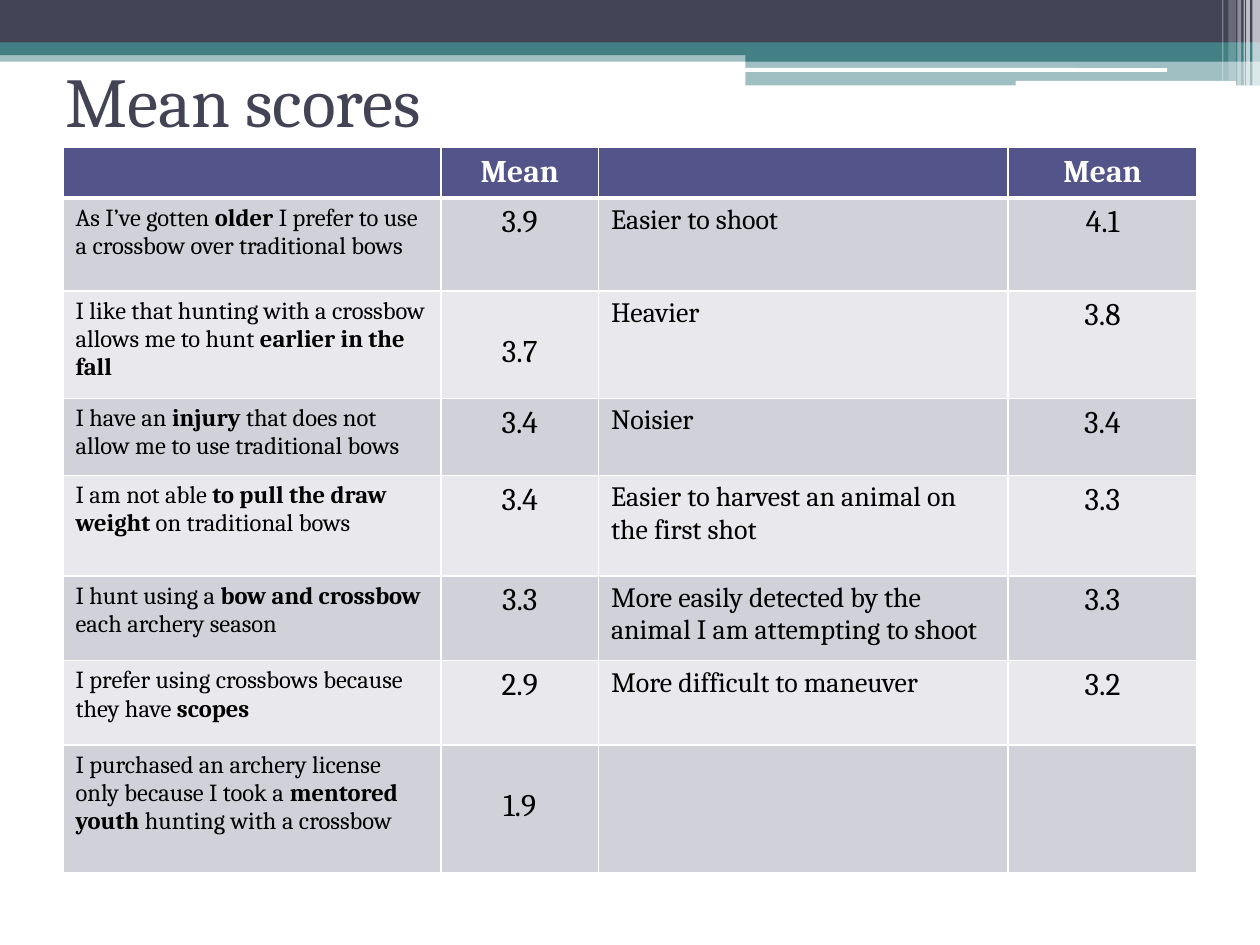
import lxml.etree
import pptx
import pptx.dml.color
import pptx.enum.shapes
import pptx.enum.text
import pptx.oxml.ns
import pptx.util

Pt = pptx.util.Pt
RGB = pptx.dml.color.RGBColor.from_string
qn = pptx.oxml.ns.qn
SHAPES = pptx.enum.shapes.MSO_SHAPE
ALIGN = pptx.enum.text.PP_ALIGN

COLORS = {
    "slate": "424456", "teal": "438086", "white": "FFFFFF", "black": "000000",
    "header": "53548A", "band_dark": "D1D1DA", "band_light": "E9E9ED",
}
FONT = "Cambria"

deck = pptx.Presentation()
deck.slide_width, deck.slide_height = Pt(720), Pt(540)
page = deck.slides.add_slide(deck.slide_layouts[6])

# Banner: left, top, width, height, colour, opacity in percent
bars = [
    (0, 28.8, 720, 6.48, "teal", 50),
    (0, 0, 720, 24.48, "slate", 100),
    (0, 24.3, 720, 7.2, "teal", 100),
    (426, 28.08, 294, 7.2, "teal", 100),
    (426, 35.1, 294, 13.68, "teal", 50),
    (425.8, 38.88, 241.2, 2.16, "white", 100),
    (580.4, 46.3, 126, 2.88, "white", 100),
    (715.68, 0, 4.32, 48.96, "white", 65),
    (712.08, 0, 2.16, 48.96, "white", 65),
    (710.64, 0, 0.72, 48.96, "white", 60),
    (707.04, 0, 2.16, 48.96, "white", 40),
    (702, 0, 4.32, 46.08, "white", 20),
    (698.4, 0, 0.72, 46.08, "white", 30),
]
for left, top, width, height, color, opacity in bars:
    rounded = color == "white" and opacity == 100
    kind = SHAPES.ROUNDED_RECTANGLE if rounded else SHAPES.RECTANGLE
    bar = page.shapes.add_shape(kind, Pt(left), Pt(top), Pt(width), Pt(height))
    bar.shadow.inherit = False
    bar.line.fill.background()
    bar.fill.solid()
    bar.fill.fore_color.rgb = RGB(COLORS[color])
    if opacity < 100:
        tint = bar._element.spPr.find(qn("a:solidFill")).find(qn("a:srgbClr"))
        lxml.etree.SubElement(tint, qn("a:alpha"), val=str(opacity * 1000))


def write(para, text, size, color, bold=False):
    """Add text to a paragraph; asterisks switch bold on and off."""
    for index, piece in enumerate(text.split("*")):
        if piece:
            span = para.add_run()
            span.text = piece
            formats = {"name": FONT, "size": Pt(size), "bold": bold or index % 2 == 1}
            for name, value in formats.items():
                setattr(span.font, name, value)
            span.font.color.rgb = RGB(COLORS[color])


def set_borders(cell, widths):
    """Draw white left, right, top and bottom borders, in that order."""
    properties = cell._tc.get_or_add_tcPr()
    for index, (side, width) in enumerate(zip("LRTB", widths)):
        line = lxml.etree.Element(qn(f"a:ln{side}"), w=str(Pt(width)))
        fill = lxml.etree.SubElement(line, qn("a:solidFill"))
        lxml.etree.SubElement(fill, qn("a:srgbClr"), val=COLORS["white"])
        properties.insert(index, line)


title = page.shapes.add_textbox(Pt(30.24), Pt(23.76), Pt(648), Pt(66.24))
title.text_frame.word_wrap = True
title.text_frame.vertical_anchor = pptx.enum.text.MSO_ANCHOR.MIDDLE
write(title.text_frame.paragraphs[0], "Mean scores", 40, "slate")

rows = [
    ("", "Mean", "", "Mean"),
    ("As I’ve gotten *older *I prefer to use a crossbow over traditional bows",
     "3.9", "Easier to shoot", "4.1"),
    ("I like that hunting with a crossbow allows me to hunt *earlier in the fall*",
     "3.7", "Heavier", "3.8"),
    ("I have an *injury* that does not allow me to use traditional bows",
     "3.4", "Noisier", "3.4"),
    ("I am not able *to pull the draw weight* on traditional bows",
     "3.4", "Easier to harvest an animal on the first shot", "3.3"),
    ("I hunt using a *bow and crossbow *each archery season",
     "3.3", "More easily detected by the animal I am attempting to shoot", "3.3"),
    ("I prefer using crossbows because they have *scopes*",
     "2.9", "More difficult to maneuver", "3.2"),
    ("I purchased an archery license only because I took a *mentored youth *"
     "hunting with a crossbow", "1.9", "", ""),
]
column_widths = [216, 90, 234, 108]
row_heights = [28.5, 53, 61.5, 44, 57.6, 48.2, 48.2, 73.2]
text_sizes = [14, 18, 16, 18]
lowered_scores = {"3.7", "1.9"}

frame = page.shapes.add_table(len(rows), len(column_widths), Pt(36), Pt(84.4),
                              Pt(sum(column_widths)), Pt(sum(row_heights)))
table = frame.table
for column, width in zip(table.columns, column_widths):
    column.width = Pt(width)

for r, texts in enumerate(rows):
    table.rows[r].height = Pt(row_heights[r])
    is_header = r == 0
    band = "header" if is_header else "band_dark" if r % 2 else "band_light"
    for c, text in enumerate(texts):
        cell = table.cell(r, c)
        cell.fill.solid()
        cell.fill.fore_color.rgb = RGB(COLORS[band])
        set_borders(cell, (1, 1, 3 if r == 1 else 1, 3 if is_header else 1))
        if text in lowered_scores:
            cell.margin_top = Pt(24.5)
        para = cell.text_frame.paragraphs[0]
        para.alignment = ALIGN.CENTER if c % 2 else ALIGN.LEFT
        write(para, text, text_sizes[c], "white" if is_header else "black", is_header)

deck.save("out.pptx")
